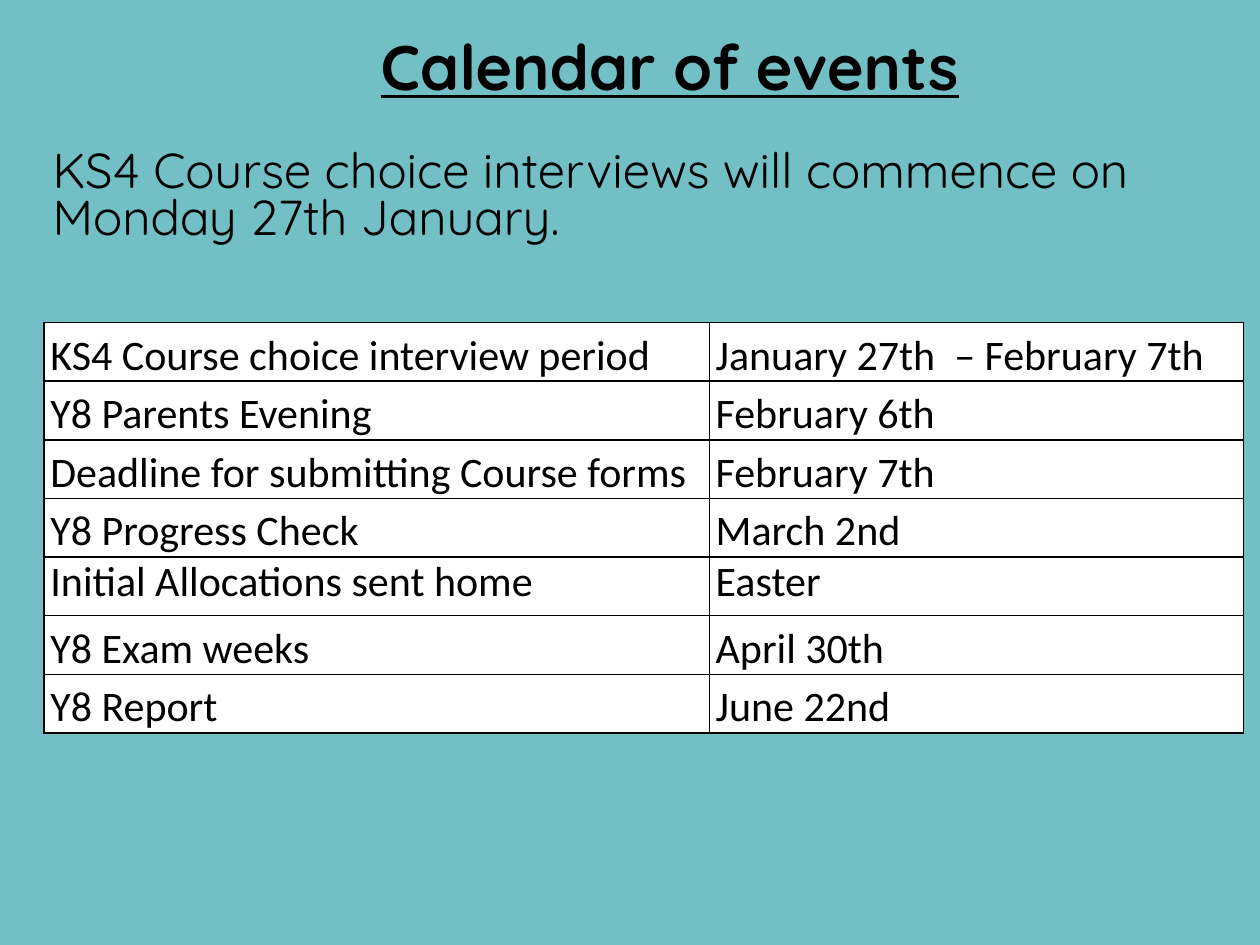
from dataclasses import dataclass

import lxml.etree
import pptx
import pptx.dml.color
import pptx.enum.text
import pptx.oxml.ns
import pptx.util

Inches = pptx.util.Inches
Pt = pptx.util.Pt
RGB = pptx.dml.color.RGBColor.from_string


@dataclass(frozen=True)
class Theme:
    back: str = "72BFC5"
    ink: str = "000000"
    cell: str = "FFFFFF"
    head: str = "Quicksand"
    body: str = "Calibri"
    title: int = 36
    intro: int = 28
    table: int = 24
    rule: int = 1


THEME = Theme()
LOOSE, SINGLE = 1.15, 1.0

EVENTS = [
    ("KS4 Course choice interview period", "January 27th  – February 7th", LOOSE),
    ("Y8 Parents Evening", "February 6th", LOOSE),
    ("Deadline for submitting Course forms", "February 7th", LOOSE),
    ("Y8 Progress Check", "March 2nd", LOOSE),
    ("Initial Allocations sent home", "Easter", SINGLE),
    ("Y8 Exam weeks", "April 30th", LOOSE),
    ("Y8 Report", "June 22nd", LOOSE),
]


def style(para, face, size):
    para.font.name = face
    para.font.size = Pt(size)
    para.font.color.rgb = RGB(THEME.ink)


def place(shape, box):
    shape.left, shape.top, shape.width, shape.height = map(Inches, box)


def add_title(slide, box, text):
    title = slide.shapes.title
    place(title, box)
    frame = title.text_frame
    frame.text = text
    frame.vertical_anchor = pptx.enum.text.MSO_ANCHOR.MIDDLE
    para = frame.paragraphs[0]
    para.alignment = pptx.enum.text.PP_ALIGN.CENTER
    style(para, THEME.head, THEME.title)
    para.font.bold = True
    para.font.underline = True


def add_intro(slide, box, text):
    frame = slide.shapes.add_textbox(*map(Inches, box)).text_frame
    frame.word_wrap = True
    frame.text = text
    para = frame.paragraphs[0]
    para.line_spacing = 0.8
    style(para, THEME.head, THEME.intro)


def add_edges(cell):
    props = cell._tc.get_or_add_tcPr()
    name = pptx.oxml.ns.qn
    for spot, side in enumerate(("a:lnL", "a:lnR", "a:lnT", "a:lnB")):
        line = lxml.etree.Element(name(side), w=str(Pt(THEME.rule)))
        fill = lxml.etree.SubElement(line, name("a:solidFill"))
        lxml.etree.SubElement(fill, name("a:srgbClr"), val=THEME.ink)
        props.insert(spot, line)


def fill_cell(cell, text, space):
    cell.fill.solid()
    cell.fill.fore_color.rgb = RGB(THEME.cell)
    cell.margin_left = cell.margin_right = Inches(0.05)
    cell.margin_top = cell.margin_bottom = 0
    cell.text = text
    para = cell.text_frame.paragraphs[0]
    para.line_spacing = space
    style(para, THEME.body, THEME.table)
    add_edges(cell)


def add_events(slide, box, events):
    wide, high = box[2:]
    table = slide.shapes.add_table(len(events), 2, *map(Inches, box)).table
    first = 5.28
    table.columns[0].width = Inches(first)
    table.columns[1].width = Inches(wide - first)
    for row, (event, date, space) in enumerate(events):
        table.rows[row].height = Inches(high / len(events))
        for col, text in enumerate((event, date)):
            fill_cell(table.cell(row, col), text, space)


def main():
    deck = pptx.Presentation()
    deck.slide_width, deck.slide_height = Inches(10), Inches(7.5)
    slide = deck.slides.add_slide(deck.slide_layouts[5])
    slide.background.fill.solid()
    slide.background.fill.fore_color.rgb = RGB(THEME.back)
    add_title(slide, (1.61, 0.21, 7.41, 0.61), "Calendar of events")
    add_intro(
        slide,
        (0.32, 1.15, 9.21, 1),
        "KS4 Course choice interviews will commence on Monday 27th January.",
    )
    add_events(slide, (0.35, 2.56, 9.52, 3.26), EVENTS)
    deck.save("out.pptx")


if __name__ == "__main__":
    main()
